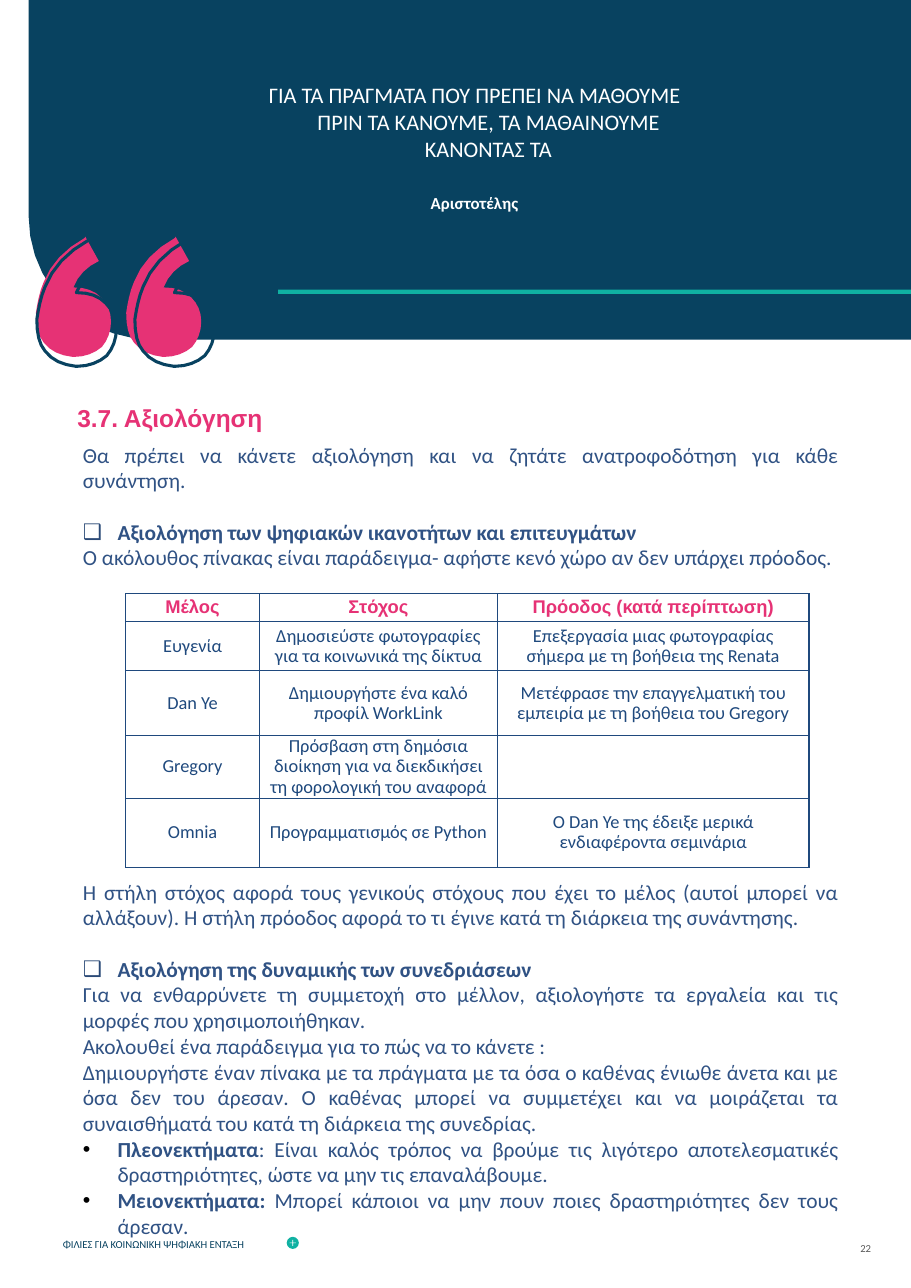
import pptx
import pptx.dml.color
import pptx.enum.shapes
import pptx.enum.text
import pptx.oxml
import pptx.oxml.ns
import pptx.util

Cm = pptx.util.Cm
Pt = pptx.util.Pt
ALIGN = pptx.enum.text.PP_ALIGN
ANCHOR = pptx.enum.text.MSO_ANCHOR
SHAPE = pptx.enum.shapes.MSO_SHAPE

NAVY, TEAL, PINK, WHITE = "084260", "10B1A2", "E63275", "FFFFFF"
BODY_BLUE, TABLE_BLUE, GREY = "305284", "1F497D", "595959"
BULLET_COLOURS = {"❑": "2B4A77", "•": "000000"}
BULLET_INDENT = 0.8
BODY_LINE = 16.8
TABLE_GAP = 12 * BODY_LINE

# Outlines in cm: two numbers are a straight step, six a Bézier curve
HEADER = [(21, 7.83), (3.51, 7.83), (1.93, 7.83, 0.66, 6.56, 0.66, 4.98),
          (0.66, 0), (21, 0)]
QUOTE_MARK = [
    (0.84, 2.77), (0.56, 2.74, 0.33, 2.64, 0.18, 2.44),
    (0.05, 2.29, 0, 2.06, 0, 1.75), (0.03, 1.55, 0.08, 1.27, 0.18, 1.04),
    (0.33, 0.64, 0.66, 0.28, 1.12, 0.03), (1.14, 0), (1.45, 0.56),
    (1.17, 0.69, 0.97, 0.89, 0.86, 1.17), (0.89, 1.17),
    (1.14, 1.17, 1.35, 1.24, 1.5, 1.4), (1.65, 1.55, 1.73, 1.73, 1.73, 1.96),
    (1.73, 2.18, 1.65, 2.39, 1.52, 2.54), (1.35, 2.69, 1.12, 2.77, 0.89, 2.77)]

PROGRESS_ROWS = [
    ["Μέλος", "Στόχος", "Πρόοδος (κατά περίπτωση)"],
    ["Ευγενία", "Δημοσιεύστε φωτογραφίες για τα κοινωνικά της δίκτυα",
     "Επεξεργασία μιας φωτογραφίας σήμερα με τη βοήθεια της Renata"],
    ["Dan Ye", "Δημιουργήστε ένα καλό προφίλ WorkLink",
     "Μετέφρασε την επαγγελματική του εμπειρία με τη βοήθεια του Gregory"],
    ["Gregory", "Πρόσβαση στη δημόσια διοίκηση για να διεκδικήσει τη φορολογική του αναφορά", ""],
    ["Omnia", "Προγραμματισμός σε Python", "Ο Dan Ye της έδειξε μερικά ενδιαφέροντα σεμινάρια"],
]

# Each paragraph: space before, bullet mark, bold text, plain text
BODY = [
    (0, "", "", "Θα πρέπει να κάνετε αξιολόγηση και να ζητάτε ανατροφοδότηση για κάθε συνάντηση."),
    (BODY_LINE, "❑", "Αξιολόγηση των ψηφιακών ικανοτήτων και επιτευγμάτων", ""),
    (0, "", "", "Ο ακόλουθος πίνακας είναι παράδειγμα- αφήστε κενό χώρο αν δεν υπάρχει πρόοδος."),
    (TABLE_GAP, "", "", "Η στήλη στόχος αφορά τους γενικούς στόχους που έχει το μέλος (αυτοί μπορεί να "
     "αλλάξουν). Η στήλη πρόοδος αφορά το τι έγινε κατά τη διάρκεια της συνάντησης."),
    (BODY_LINE, "❑", "Αξιολόγηση της δυναμικής των συνεδριάσεων", ""),
    (0, "", "", "Για να ενθαρρύνετε τη συμμετοχή στο μέλλον, αξιολογήστε τα εργαλεία και τις "
     "μορφές που χρησιμοποιήθηκαν."),
    (0, "", "", "Ακολουθεί ένα παράδειγμα για το πώς να το κάνετε :"),
    (0, "", "", "Δημιουργήστε έναν πίνακα με τα πράγματα με τα όσα ο καθένας ένιωθε άνετα και με "
     "όσα δεν του άρεσαν. Ο καθένας μπορεί να συμμετέχει και να μοιράζεται τα "
     "συναισθήματά του κατά τη διάρκεια της συνεδρίας."),
    (0, "•", "Πλεονεκτήματα", ": Είναι καλός τρόπος να βρούμε τις λιγότερο αποτελεσματικές "
     "δραστηριότητες, ώστε να μην τις επαναλάβουμε."),
    (0, "•", "Μειονεκτήματα: ", "Μπορεί κάποιοι να μην πουν ποιες δραστηριότητες δεν τους άρεσαν."),
]


def colour(hex_string):
    return pptx.dml.color.RGBColor.from_string(hex_string)


def trace(steps, steps_per_curve):
    """Turn straight and curved steps into a list of points."""
    points = []
    for step in steps:
        if len(step) == 2:
            points.append(step)
            continue
        nodes = [points[-1], step[0:2], step[2:4], step[4:6]]
        for index in range(1, steps_per_curve + 1):
            t = index / steps_per_curve
            weights = [(1 - t) ** 3, 3 * t * (1 - t) ** 2, 3 * t * t * (1 - t), t ** 3]
            points.append(tuple(sum(weight * node[axis] for weight, node in zip(weights, nodes))
                                for axis in (0, 1)))
    return points


class Page:
    font = "Calibri"

    def __init__(self, presentation):
        self.slide = presentation.slides.add_slide(presentation.slide_layouts[5])

    def style(self, paragraph, size, text_colour, bold=None, font=None, align=ALIGN.LEFT):
        paragraph.alignment = align
        paragraph.font.size = Pt(size)
        paragraph.font.name = font or self.font
        paragraph.font.color.rgb = colour(text_colour)
        if bold is not None:
            paragraph.font.bold = bold

    def paint(self, shape, fill=None, line=None, width=2):
        shape.shadow.inherit = False
        if fill:
            shape.fill.solid()
            shape.fill.fore_color.rgb = colour(fill)
        else:
            shape.fill.background()
        if line:
            shape.line.color.rgb = colour(line)
            shape.line.width = Pt(width)
        else:
            shape.line.fill.background()

    def preset(self, kind, left, top, width, height, fill):
        shape = self.slide.shapes.add_shape(kind, Cm(left), Cm(top), Cm(width), Cm(height))
        self.paint(shape, fill)
        return shape

    def outline(self, contours, **paint):
        builder = None
        for contour in contours:
            points = [(Cm(x), Cm(y)) for x, y in contour]
            if builder is None:
                builder = self.slide.shapes.build_freeform(*points[0], scale=1.0)
            else:
                builder.move_to(*points[0])
            builder.add_line_segments(points[1:], close=True)
        self.paint(builder.convert_to_shape(), **paint)

    def quote_marks(self, left, top, pitch, scale, **paint):
        mark = trace(QUOTE_MARK, 4)
        self.outline([[(left + shift + x * scale, top + y * scale) for x, y in mark]
                      for shift in (0, pitch)], **paint)

    def title(self, text, left, top, width, height):
        shape = self.slide.shapes.title
        shape.left, shape.top, shape.width, shape.height = Cm(left), Cm(top), Cm(width), Cm(height)
        shape.text_frame.text = text
        shape.text_frame.vertical_anchor = ANCHOR.TOP
        self.style(shape.text_frame.paragraphs[0], 16, PINK, True, "Arial", ALIGN.JUSTIFY)

    def text_box(self, left, top, width, height, anchor=ANCHOR.MIDDLE):
        frame = self.slide.shapes.add_textbox(Cm(left), Cm(top), Cm(width), Cm(height)).text_frame
        frame.word_wrap = True
        frame.vertical_anchor = anchor
        return frame

    def label(self, text, left, top, width, height, text_colour, align=ALIGN.LEFT):
        paragraph = self.text_box(left, top, width, height).paragraphs[0]
        paragraph.text = text
        self.style(paragraph, 7, text_colour, align=align)

    def indent(self, paragraph, left, first):
        properties = paragraph._p.get_or_add_pPr()
        properties.set("marL", str(Cm(left)))
        properties.set("indent", str(Cm(first)))
        return properties

    def bullet(self, paragraph, mark):
        properties = self.indent(paragraph, BULLET_INDENT, -BULLET_INDENT)
        namespace = pptx.oxml.ns.nsdecls("a")
        for xml in (f'<a:buClr {namespace}><a:srgbClr val="{BULLET_COLOURS[mark]}"/></a:buClr>',
                    f'<a:buFont {namespace} typeface="Arial"/>',
                    f'<a:buChar {namespace} char="{mark}"/>'):
            properties.append(pptx.oxml.parse_xml(xml))

    def body(self, left, top, width, height, items):
        frame = self.text_box(left, top, width, height, ANCHOR.TOP)
        for index, (space, mark, strong, plain) in enumerate(items):
            paragraph = frame.add_paragraph() if index else frame.paragraphs[0]
            if mark:
                self.bullet(paragraph, mark)
            if space:
                paragraph.space_before = Pt(space)
            self.style(paragraph, 14, BODY_BLUE, align=ALIGN.JUSTIFY)
            for text, bold in ((strong, True), (plain, False)):
                if text:
                    run = paragraph.add_run()
                    run.text = text
                    run.font.bold = bold

    def table(self, left, top, widths, heights, rows):
        table = self.slide.shapes.add_table(len(rows), len(widths), Cm(left), Cm(top),
                                            Cm(sum(widths)), Cm(sum(heights))).table
        table.first_row = table.horz_banding = False
        for column, width in zip(table.columns, widths):
            column.width = Cm(width)
        for row_index, (row, height) in enumerate(zip(rows, heights)):
            table.rows[row_index].height = Cm(height)
            for column_index, text in enumerate(row):
                self.cell(table.cell(row_index, column_index), text, row_index == 0)

    def cell(self, cell, text, heading):
        cell.text = text
        cell.vertical_anchor = ANCHOR.MIDDLE
        cell.margin_left = cell.margin_right = Cm(0.18)
        cell.margin_top = cell.margin_bottom = 0
        paragraph = cell.text_frame.paragraphs[0]
        paragraph.line_spacing = 0.9
        self.style(paragraph, 12, PINK if heading else TABLE_BLUE, heading,
                   "Arial" if heading else None, ALIGN.CENTER)
        cell.fill.background()
        for index, side in enumerate("LRTB"):
            cell._tc.get_or_add_tcPr().insert(index, pptx.oxml.parse_xml(
                f'<a:ln{side} {pptx.oxml.ns.nsdecls("a")} w="{Pt(1)}"><a:solidFill>'
                f'<a:srgbClr val="{TABLE_BLUE}"/></a:solidFill></a:ln{side}>'))


def main():
    presentation = pptx.Presentation()
    presentation.slide_width, presentation.slide_height = Cm(21), Cm(29.7)
    page = Page(presentation)

    # Footer
    page.label("ΦΙΛΊΕΣ ΓΙΑ ΚΟΙΝΩΝΙΚΉ ΨΗΦΙΑΚΉ ΈΝΤΑΞΗ", 1.2, 28.17, 10.24, 1.02, NAVY)
    page.preset(SHAPE.OVAL, 6.61, 28.52, 0.28, 0.28, TEAL)
    page.preset(SHAPE.CROSS, 6.68, 28.59, 0.14, 0.14, WHITE).adjustments[0] = 0.45
    page.label("22", 19.16, 28.14, 1.17, 1.3, GREY, ALIGN.RIGHT)

    # Header with the quotation
    page.outline([trace(HEADER, 10)], fill=NAVY)
    page.preset(SHAPE.RECTANGLE, 6.41, 6.68, 14.59, 0.1, TEAL)
    quotation = page.text_box(5.28, 1.45, 10.69, 3.89)
    saying, author = quotation.paragraphs[0], quotation.add_paragraph()
    saying.text = "ΓΙΑ ΤΑ ΠΡΆΓΜΑΤΑ ΠΟΥ ΠΡΈΠΕΙ ΝΑ ΜΆΘΟΥΜΕ ΠΡΙΝ ΤΑ ΚΆΝΟΥΜΕ, ΤΑ ΜΑΘΑΊΝΟΥΜΕ ΚΆΝΟΝΤΆΣ ΤΑ"
    author.text = "Αριστοτέλης"
    author.space_before, author.line_spacing = Pt(22.7), 0.8
    for paragraph, size, bold in ((saying, 14.5, False), (author, 11, True)):
        page.indent(paragraph, 1.27, -0.64)
        page.style(paragraph, size, WHITE, bold, align=ALIGN.CENTER)
    page.quote_marks(0.83, 5.46, 2.08, 1, fill=PINK)
    page.quote_marks(0.85, 5.51, 2.26, 1.06, line=NAVY)

    # Evaluation text, with room left for the progress table
    page.title("3.7. Αξιολόγηση", 1.53, 9.17, 8.97, 1.47)
    page.body(1.66, 10.06, 17.93, 18.8, BODY)
    page.table(2.9, 13.69, [3.08, 5.49, 7.18], [0.64, 1.14, 1.49, 1.45, 1.59], PROGRESS_ROWS)

    presentation.save("out.pptx")


if __name__ == "__main__":
    main()
